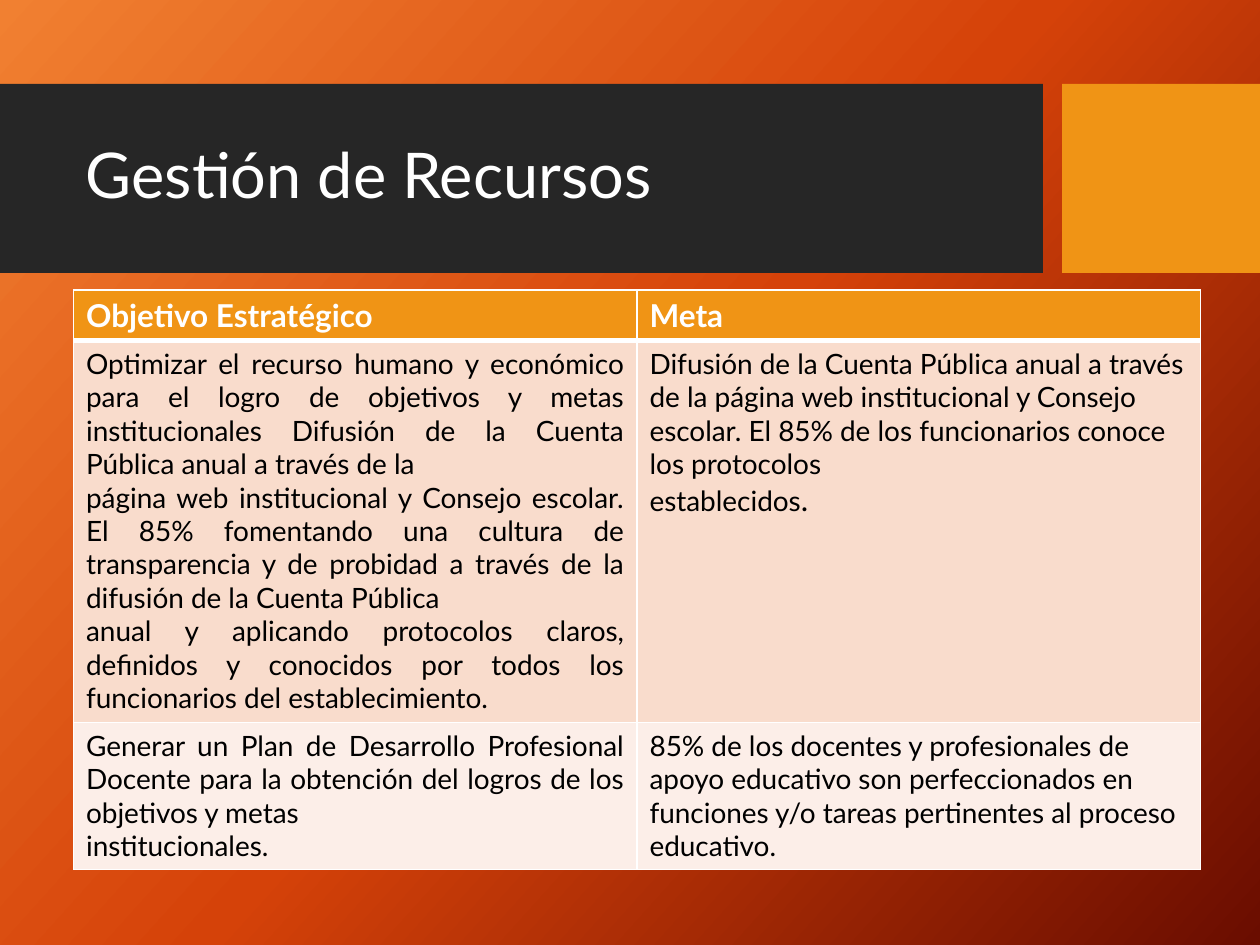
from copy import deepcopy
from pptx import Presentation
from pptx import util as u
from pptx.dml.color import RGBColor
from pptx.enum import shapes, text
from pptx.oxml import ns
from lxml import etree

TITLE = "Gestión de Recursos"
HEADS = ["Objetivo Estratégico", "Meta"]
ROWS = [
    (["Optimizar el recurso humano y económico para el logro de objetivos y metas institucionales Difusión de la Cuenta Pública anual a través de la",
      "página web institucional y Consejo escolar. El 85% fomentando una cultura de transparencia y de probidad a través de la difusión de la Cuenta Pública",
      "anual y aplicando protocolos claros, definidos y conocidos por todos los funcionarios del establecimiento."],
     ["Difusión de la Cuenta Pública anual a través de la página web institucional y Consejo escolar. El 85% de los funcionarios conoce los protocolos",
      ["establecidos", "."]]),
    (["Generar un Plan de Desarrollo Profesional Docente para la obtención del logros de los objetivos y metas",
      "institucionales."],
     ["85% de los docentes y profesionales de apoyo educativo son perfeccionados en funciones y/o tareas pertinentes al proceso educativo."]),
]
THEME = dict(
    font="Lato", title=36, head=18, body=16,
    white="FFFFFF", black="000000", dark="262626", gold="F09415",
    bands=["F9DCCC", "FCEEE8"],
    back=[(0, "F18031"), (0.5, "D54209"), (1, "6A0D00")],
)
HEIGHTS = [29, 218, 84]
BANNER = [(0, 596, THEME["dark"]), (607, 113, THEME["gold"])]


def rgb(code):
    return RGBColor.from_string(code)


def write(frame, paras, size, color, bold=False, align=text.PP_ALIGN.LEFT,
          space=None, last=None):
    for i, para in enumerate(paras):
        p = frame.paragraphs[0] if i == 0 else frame.add_paragraph()
        p.alignment = align
        if space:
            p.line_spacing = space
        parts = [para] if isinstance(para, str) else para
        for j, part in enumerate(parts):
            run = p.add_run()
            run.text = part
            font = run.font
            font.name, font.bold = THEME["font"], bold
            font.size = u.Pt(last if last and j else size)
            font.color.rgb = rgb(color)


def edge(cell, widths):
    props = cell._tc.get_or_add_tcPr()
    for side, width in zip("LRTB", widths):
        line = etree.SubElement(props, ns.qn("a:ln" + side), w=str(u.Pt(width)))
        fill = etree.SubElement(line, ns.qn("a:solidFill"))
        etree.SubElement(fill, ns.qn("a:srgbClr"), val=THEME["white"])


def paint(slide):
    fill = slide.background.fill
    fill.gradient()
    fill.gradient_angle = 318
    stops = slide.element.find(".//" + ns.qn("a:gsLst"))
    stops.append(deepcopy(stops[-1]))
    for stop, (pos, code) in zip(fill.gradient_stops, THEME["back"]):
        stop.position = pos
        stop.color.rgb = rgb(code)


def banner(slide):
    for left, width, code in BANNER:
        box = slide.shapes.add_shape(shapes.MSO_SHAPE.RECTANGLE, u.Pt(left),
                                     u.Pt(48), u.Pt(width), u.Pt(108))
        box.shadow.inherit = False
        box.fill.solid()
        box.fill.fore_color.rgb = rgb(code)
        box.line.fill.background()
    frame = slide.shapes.add_textbox(u.Pt(42), u.Pt(59), u.Pt(543), u.Pt(85)).text_frame
    frame.word_wrap = True
    frame.vertical_anchor = text.MSO_ANCHOR.MIDDLE
    write(frame, [TITLE], THEME["title"], THEME["white"], space=0.9)


def grid(slide):
    rows = [[[head] for head in HEADS], *ROWS]
    table = slide.shapes.add_table(len(rows), len(HEADS), u.Pt(42), u.Pt(165.6),
                                   u.Pt(644), u.Pt(sum(HEIGHTS))).table
    table.first_row = table.horz_banding = False
    fills = [THEME["gold"], *THEME["bands"]]
    for r, (row, height) in enumerate(zip(rows, HEIGHTS)):
        table.rows[r].height = u.Pt(height)
        top = r == 0
        for c, paras in enumerate(row):
            cell = table.cell(r, c)
            edge(cell, (1, 1, 3 if r == 1 else 1, 3 if top else 1))
            cell.fill.solid()
            cell.fill.fore_color.rgb = rgb(fills[r])
            just = top == (c == 1)
            write(cell.text_frame, paras,
                  THEME["head"] if top else THEME["body"],
                  THEME["white"] if top else THEME["black"], bold=top,
                  align=text.PP_ALIGN.JUSTIFY if just else text.PP_ALIGN.LEFT,
                  last=THEME["head"])


def main():
    deck = Presentation()
    deck.slide_width, deck.slide_height = u.Pt(720), u.Pt(540)
    slide = deck.slides.add_slide(deck.slide_layouts[6])
    paint(slide)
    banner(slide)
    grid(slide)
    deck.save("out.pptx")


if __name__ == "__main__":
    main()
